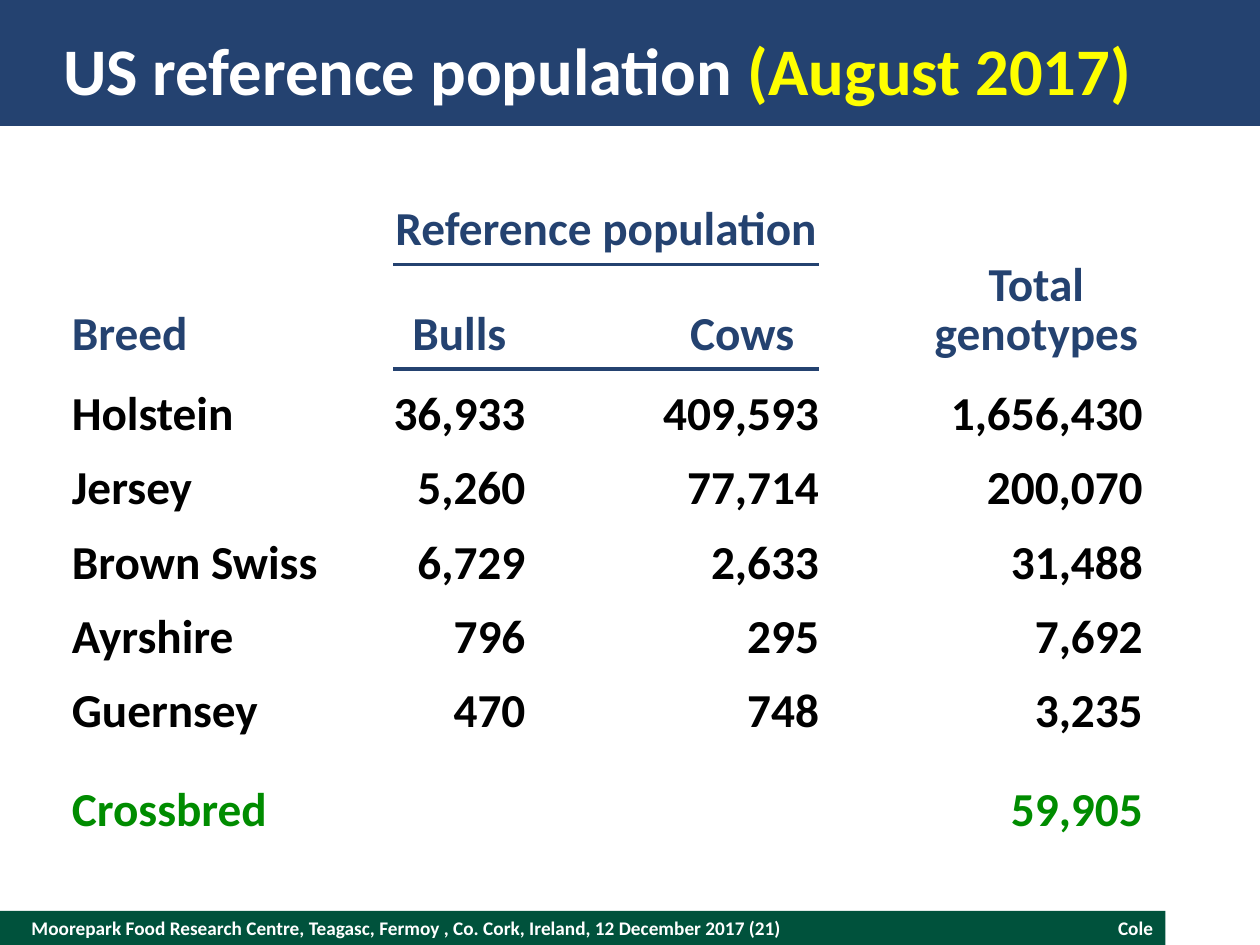
from lxml import etree
from pptx import Presentation
from pptx import util as u
from pptx.dml.color import RGBColor
from pptx.enum import shapes, text
from pptx.oxml import ns

COLORS = {
    "navy": "244270",
    "forest": "00523C",
    "white": "FFFFFF",
    "yellow": "FFFF00",
    "black": "000000",
    "green": "008C00",
}
NO_STYLE = "{2D5ABB26-0587-4C30-8999-92F81FD0307C}"
LEFT, CENTER, RIGHT = text.PP_ALIGN.LEFT, text.PP_ALIGN.CENTER, text.PP_ALIGN.RIGHT
COLUMN_WIDTHS = [2.55, 1.05, 1.03, 1.3, 0.88, 1.69]
ROW_HEIGHTS = [0.57, 0.62] + [0.59] * 5 + [0.78]
VALUE_COLUMNS = [0, 1, 3, 5]
BREEDS = [
    ("Holstein", "36,933", "409,593", "1,656,430"),
    ("Jersey", "5,260", "77,714", "200,070"),
    ("Brown Swiss", "6,729", "2,633", "31,488"),
    ("Ayrshire", "796", "295", "7,692"),
    ("Guernsey", "470", "748", "3,235"),
    ("Crossbred", "", "", "59,905"),
]


def rgb(name):
    return RGBColor.from_string(COLORS[name])


def apply(target, values):
    for name, value in values.items():
        setattr(target, name, value)


def add_span(para, words, size, color):
    span = para.add_run()
    span.text = words
    apply(span.font, {"name": "Calibri", "size": u.Pt(size), "bold": True})
    span.font.color.rgb = rgb(color)


def set_margins(target, left=0, top=0, right=0, bottom=0):
    sides = {"left": left, "top": top, "right": right, "bottom": bottom}
    apply(target, {f"margin_{side}": u.Inches(size) for side, size in sides.items()})


def add_band(page, left, top, width, height, color):
    band = page.shapes.add_shape(
        shapes.MSO_SHAPE.RECTANGLE, *map(u.Inches, (left, top, width, height)))
    band.shadow.inherit = False
    band.fill.solid()
    band.fill.fore_color.rgb = rgb(color)
    band.line.fill.background()
    page.shapes._spTree.insert(2, band._element)


def add_footer(page, words, left, width, align, margin):
    box = page.shapes.add_textbox(*map(u.Inches, (left, 7.23, width, 0.27)))
    frame = box.text_frame
    apply(frame, {"word_wrap": True, "vertical_anchor": text.MSO_ANCHOR.MIDDLE})
    set_margins(frame, left=margin, right=margin)
    frame.paragraphs[0].alignment = align
    add_span(frame.paragraphs[0], words, 11, "white")


def set_title(page):
    title = page.shapes.title
    places = zip(("left", "top", "width", "height"), (0.5, 0.2, 9, 0.7))
    apply(title, {name: u.Inches(size) for name, size in places})
    frame = title.text_frame
    apply(frame, {"word_wrap": True, "auto_size": text.MSO_AUTO_SIZE.NONE,
                  "vertical_anchor": text.MSO_ANCHOR.MIDDLE})
    set_margins(frame)
    para = frame.paragraphs[0]
    para.alignment = LEFT
    add_span(para, "US reference population ", 38, "white")
    add_span(para, "(August 2017)", 38, "yellow")


def fill_cell(cell, lines, align, spacing, color, **margins):
    set_margins(cell, **margins)
    frame = cell.text_frame
    for index, words in enumerate(lines):
        para = frame.add_paragraph() if index else frame.paragraphs[0]
        apply(para, {"alignment": align, "line_spacing": u.Pt(spacing)})
        add_span(para, words, 27, color)


def add_rule(cell, edge):
    line = etree.Element(ns.qn(f"a:{edge}"), w=str(u.Pt(2.25)))
    fill = etree.SubElement(line, ns.qn("a:solidFill"))
    etree.SubElement(fill, ns.qn("a:srgbClr"), val=COLORS["navy"])
    cell._tc.get_or_add_tcPr().insert(0, line)


def add_grid(page):
    frame = page.shapes.add_table(
        len(ROW_HEIGHTS), len(COLUMN_WIDTHS),
        *map(u.Inches, (0.57, 1.53, sum(COLUMN_WIDTHS), sum(ROW_HEIGHTS))))
    table = frame.table
    apply(table, {"first_row": False, "horz_banding": False})
    table._tbl.tblPr.find(ns.qn("a:tableStyleId")).text = NO_STYLE
    for column, width in zip(table.columns, COLUMN_WIDTHS):
        column.width = u.Inches(width)
    for row, height in zip(table.rows, ROW_HEIGHTS):
        row.height = u.Inches(height)
    for cell in table.iter_cells():
        cell.fill.background()
        cell.vertical_anchor = text.MSO_ANCHOR.BOTTOM
        set_margins(cell)
    return table


def fill_headers(table):
    for first, last in (((0, 0), (1, 0)), ((0, 1), (0, 3)),
                        ((0, 4), (1, 4)), ((0, 5), (1, 5))):
        table.cell(*first).merge(table.cell(*last))
    headers = [
        (0, 0, ["Breed"], LEFT, {}),
        (0, 1, ["Reference population"], CENTER, {}),
        (0, 5, ["Total", "genotypes"], CENTER, {}),
        (1, 1, ["Bulls"], CENTER, {"top": 0.05}),
        (1, 3, ["Cows"], CENTER, {"top": 0.05, "left": 0.08}),
    ]
    for row, column, lines, align, margins in headers:
        fill_cell(table.cell(row, column), lines, align, 28, "navy",
                  bottom=0.05, **margins)
    for column in range(1, 4):
        add_rule(table.cell(0, column), "lnB")
        add_rule(table.cell(1, column), "lnT")


def fill_breeds(table):
    for row, values in enumerate(BREEDS, start=2):
        crossbred = values[0] == "Crossbred"
        spacing, color = (42, "green") if crossbred else (32, "black")
        for column, value in zip(VALUE_COLUMNS, values):
            if value:
                align = RIGHT if column else LEFT
                fill_cell(table.cell(row, column), [value], align, spacing, color)


def main():
    deck = Presentation()
    apply(deck, {"slide_width": u.Inches(10), "slide_height": u.Inches(7.5)})
    page = deck.slides.add_slide(deck.slide_layouts[5])
    add_band(page, 0, 0, 10, 1, "navy")
    add_band(page, 0, 7.23, 9.25, 0.27, "forest")
    set_title(page)
    add_footer(page, "Moorepark Food Research Centre, Teagasc, Fermoy , Co. Cork, "
               "Ireland, 12 December 2017 (21)", 0.25, 6.5, LEFT, 0)
    add_footer(page, "Cole", 7.25, 2, RIGHT, 0.1)
    table = add_grid(page)
    fill_headers(table)
    fill_breeds(table)
    deck.save("out.pptx")


if __name__ == "__main__":
    main()
